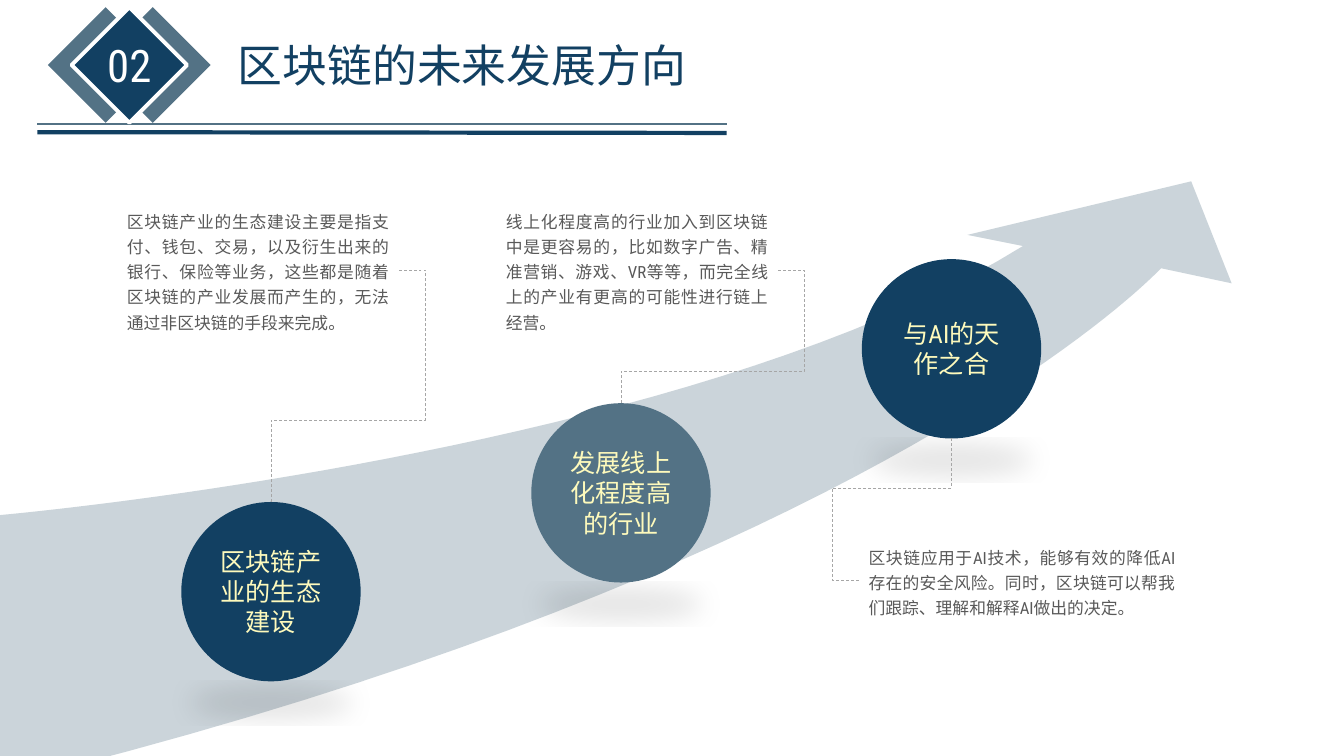
from lxml import etree
from pptx import Presentation
from pptx.dml.color import RGBColor
from pptx.enum import dml, shapes, text
from pptx.oxml import ns
from pptx.util import Cm, Pt

# Content: lengths in cm
SECTION = "02"
TITLE = "区块链的未来发展方向"
STAGES = [
    dict(label="区块链产业的生态建设", color="navy", circle=(4.57, 12.65),
         box=(2.95, 5.08, 7.11, 3.45), drop=-2.06,
         note="区块链产业的生态建设主要是指支付、钱包、交易，以及衍生出来的银行、保险等业务，"
              "这些都是随着区块链的产业发展而产生的，无法通过非区块链的手段来完成。"),
    dict(label="发展线上化程度高的行业", color="slate", circle=(13.39, 10.16),
         box=(12.5, 5.08, 7.11, 3.45), drop=-0.81,
         note="线上化程度高的行业加入到区块链中是更容易的，比如数字广告、精准营销、游戏、"
              "VR等等，而完全线上的产业有更高的可能性进行链上经营。"),
    dict(label="与AI的天作之合", color="navy", circle=(21.72, 6.53),
         box=(21.64, 13.54, 8.23, 2.18), drop=1.25,
         note="区块链应用于AI技术，能够有效的降低AI存在的安全风险。同时，"
              "区块链可以帮我们跟踪、理解和解释AI做出的决定。"),
]
ARROW_TOP = [(0, 12.98), (0, 12.98), (17.35, 11.46), (25.78, 6.2)]
ARROW_HEAD = [(24.38, 5.92), (30.02, 4.57), (31.04, 7.14), (29.26, 6.76)]
ARROW_BOTTOM = [(29.26, 6.76), (29.26, 6.76), (22.28, 14.33), (0, 19.76)]
CIRCLE = 4.52
DIAMOND = 2.06
ELBOW_REACH = 0.66

THEME = dict(
    navy=RGBColor.from_string("124062"), slate=RGBColor.from_string("537285"),
    cream=RGBColor.from_string("FEFABC"), white=RGBColor.from_string("FFFFFF"),
    body=RGBColor.from_string("595959"), guide=RGBColor.from_string("A6A6A6"),
    latin="Roboto Condensed", cjk="Noto Sans CJK SC",
    title_size=Pt(32), label_size=Pt(18), note_size=Pt(12),
)


def write(shape, words, color, size, align, anchor, font="latin", spacing=None):
    frame = shape.text_frame
    for name, value in dict(word_wrap=True, auto_size=text.MSO_AUTO_SIZE.NONE,
                            vertical_anchor=anchor).items():
        setattr(frame, name, value)
    paragraph = frame.paragraphs[0]
    paragraph.alignment = align
    if spacing:
        paragraph.line_spacing = spacing
    run = paragraph.add_run()
    run.text = words
    for name, value in dict(name=THEME[font], size=THEME[size]).items():
        setattr(run.font, name, value)
    run.font.color.rgb = THEME[color]
    east_asian = etree.SubElement(run.font._element, ns.qn("a:ea"))
    east_asian.set("typeface", THEME["cjk"])


def paint(shape, fill, outline=None):
    shape.shadow.inherit = False
    shape.fill.solid()
    shape.fill.fore_color.rgb = THEME[fill]
    if outline:
        shape.line.color.rgb = THEME[outline]
        shape.line.width = Pt(2.75)
    else:
        shape.line.fill.background()


def add_line(slide, kind, start, end, color, width):
    line = slide.shapes.add_connector(kind, *[Cm(v) for v in (*start, *end)])
    line.line.color.rgb = THEME[color]
    line.line.width = Pt(width)
    etree.SubElement(line._element.spPr, ns.qn("a:effectLst"))
    return line


def add_elbow(slide, start, turn, end):
    """Dashed line leaving start vertically, passing turn, entering end sideways."""
    line = add_line(slide, shapes.MSO_CONNECTOR.ELBOW, start, end, "guide", 0.5)
    line.line.dash_style = dml.MSO_LINE.DASH
    (x1, y1), (x2, y2) = start, end
    width, height = abs(y2 - y1), abs(x2 - x1)
    bounds = dict(left=(x1 + x2 - width) / 2, top=(y1 + y2 - height) / 2,
                  width=width, height=height)
    for name, value in bounds.items():
        setattr(line, name, Cm(value))
    frame = line._element.spPr.find(ns.qn("a:xfrm"))
    for flip in ("flipH", "flipV"):
        frame.attrib.pop(flip, None)
    frame.set("rot", str((270 if y2 < y1 else 90) * 60000))
    geometry = line._element.spPr.find(ns.qn("a:prstGeom"))
    geometry.set("prst", "bentConnector4")
    guides = geometry.find(ns.qn("a:avLst"))
    if guides is None:
        guides = etree.SubElement(geometry, ns.qn("a:avLst"))
    ratios = ((turn[1] - y1) / (y2 - y1), (turn[0] - x1) / (x2 - x1))
    for number, ratio in enumerate(ratios, 1):
        etree.SubElement(guides, ns.qn("a:gd"), name=f"adj{number}",
                         fmla=f"val {round(ratio * 100000)}")


def add_reflection_shadow(shape):
    effects = shape._element.spPr.find(ns.qn("a:effectLst"))
    shadow = etree.SubElement(effects, ns.qn("a:outerShdw"), blurRad=str(Pt(19)),
                              dist=str(Pt(3)), dir="5400000", sx="90000",
                              sy="-19000", rotWithShape="0")
    black = etree.SubElement(shadow, ns.qn("a:srgbClr"), val="000000")
    etree.SubElement(black, ns.qn("a:alpha"), val="10000")


def bezier(points, steps=40):
    for step in range(1, steps + 1):
        t = step / steps
        weights = ((1 - t) ** 3, 3 * t * (1 - t) ** 2, 3 * t * t * (1 - t), t ** 3)
        yield tuple(sum(w * p[axis] for w, p in zip(weights, points)) for axis in (0, 1))


def add_header(slide):
    rules = [((18.31, 3.12), (0.94, 3.12), "slate", 1),
             ((18.31, 3.35), (0.94, 3.33), "navy", 3)]
    add_line(slide, shapes.MSO_CONNECTOR.STRAIGHT, *rules[0])
    for left, fill, outline in ((2.82, "slate", None), (1.63, "slate", None),
                                (2.23, "navy", "white")):
        diamond = slide.shapes.add_shape(shapes.MSO_SHAPE.RECTANGLE, Cm(left), Cm(0.61),
                                         Cm(DIAMOND), Cm(DIAMOND))
        diamond.rotation = 45
        paint(diamond, fill, outline)
    number = slide.shapes.add_textbox(Cm(2.41), Cm(0.81), Cm(1.7), Cm(1.63))
    write(number, SECTION, "white", "title_size", text.PP_ALIGN.CENTER, text.MSO_ANCHOR.MIDDLE)
    add_line(slide, shapes.MSO_CONNECTOR.STRAIGHT, *rules[1])
    title = slide.shapes.title
    for name, value in dict(left=5.74, top=0.81, width=13.08, height=1.63).items():
        setattr(title, name, Cm(value))
    write(title, TITLE, "navy", "title_size", text.PP_ALIGN.LEFT,
          text.MSO_ANCHOR.MIDDLE, font="cjk")


def add_arrow(slide):
    outline = [*bezier(ARROW_TOP), *ARROW_HEAD, *bezier(ARROW_BOTTOM)]
    builder = slide.shapes.build_freeform(*[Cm(v) for v in ARROW_TOP[0]])
    builder.add_line_segments([(Cm(x), Cm(y)) for x, y in outline], close=True)
    arrow = builder.convert_to_shape()
    paint(arrow, "slate")
    color = arrow._element.spPr.find(ns.qn("a:solidFill"))[0]
    etree.SubElement(color, ns.qn("a:alpha"), val="30000")


def add_stage(slide, stage):
    x, y = stage["circle"]
    circle = slide.shapes.add_shape(shapes.MSO_SHAPE.OVAL, Cm(x), Cm(y), Cm(CIRCLE), Cm(CIRCLE))
    paint(circle, stage["color"])
    add_reflection_shadow(circle)
    write(circle, stage["label"], "cream", "label_size", text.PP_ALIGN.CENTER,
          text.MSO_ANCHOR.MIDDLE)

    # Notes above join on their right side, notes below on their left
    left, top, width, height = stage["box"]
    above = stage["drop"] < 0
    start = (x + CIRCLE / 2, y if above else y + CIRCLE)
    end = (left + width if above else left, top + height / 2)
    turn = (end[0] + (ELBOW_REACH if above else -ELBOW_REACH), start[1] + stage["drop"])
    add_elbow(slide, start, turn, end)
    note = slide.shapes.add_textbox(*[Cm(v) for v in stage["box"]])
    write(note, stage["note"], "body", "note_size", text.PP_ALIGN.JUSTIFY,
          text.MSO_ANCHOR.TOP, spacing=1.25)


def main():
    deck = Presentation()
    deck.slide_width, deck.slide_height = Cm(33.87), Cm(19.05)
    slide = deck.slides.add_slide(deck.slide_layouts[5])
    add_header(slide)
    add_arrow(slide)
    for stage in STAGES:
        add_stage(slide, stage)
    deck.save("out.pptx")


if __name__ == "__main__":
    main()
